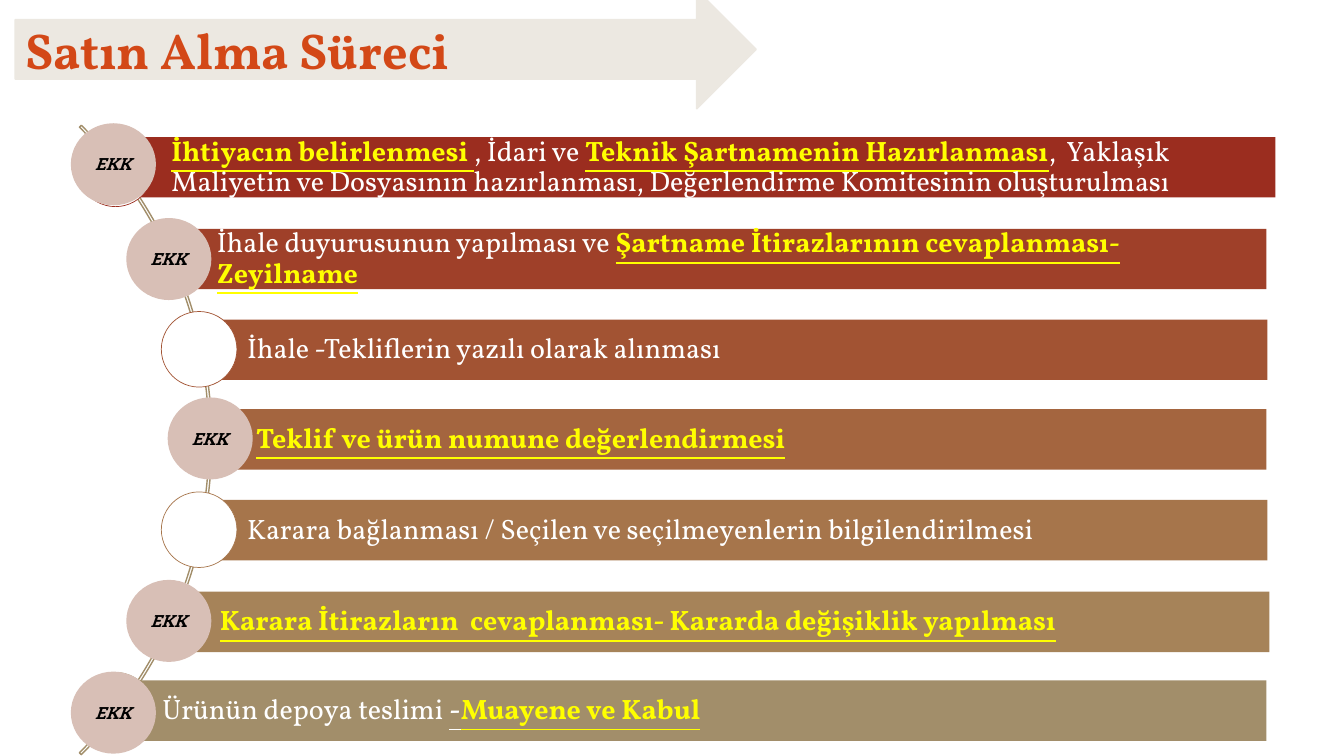
from dataclasses import dataclass

from pptx import Presentation
from pptx.dml.color import RGBColor
from pptx.enum.shapes import MSO_SHAPE
from pptx.enum.text import MSO_ANCHOR, MSO_AUTO_SIZE, PP_ALIGN
from pptx.util import Inches, Pt

RECT = MSO_SHAPE.RECTANGLE
OVAL = MSO_SHAPE.OVAL
DISC = MSO_SHAPE.FLOWCHART_CONNECTOR
ARC = MSO_SHAPE.BLOCK_ARC
ARROW = MSO_SHAPE.RIGHT_ARROW
MIDDLE = MSO_ANCHOR.MIDDLE
LEFT, CENTER = PP_ALIGN.LEFT, PP_ALIGN.CENTER
NO_FIT = MSO_AUTO_SIZE.NONE


@dataclass(frozen=True)
class Theme:
    white: str = "FFFFFF"
    black: str = "000000"
    mark: str = "FFFF00"
    title: str = "D34817"
    arrow: str = "ECE8E1"
    disc: str = "D8BFB6"
    arc: str = "A28E6A"
    serif: str = "Vollkorn"
    slab: str = "Roboto Slab"
    title_size: int = 36
    step_size: int = 20
    tag_size: int = 12


THEME = Theme()
PLAIN = dict(color=THEME.white)
KEY = dict(color=THEME.mark, bold=True, under=True)
DASH = dict(color=THEME.white, bold=True, under=True)

# Each step: colour, bar (left, top, width), ring left, disc place, text runs
STEPS = [
    ("9B2D1F", (1.23, 1.36, 11.42), 0.77, (0.71, 1.23), [
        ("İhtiyacın belirlenmesi ", KEY),
        (", İdari ve ", PLAIN),
        ("Teknik Şartnamenin Hazırlanması", KEY),
        (",  Yaklaşık Maliyetin ve Dosyasının hazırlanması, "
         "Değerlendirme Komitesinin oluşturulması", PLAIN)]),
    ("9F4029", (1.68, 2.27, 10.88), 1.31, (1.26, 2.17), [
        ("İhale duyurusunun yapılması ve ", PLAIN),
        ("Şartname İtirazlarının cevaplanması-Zeyilname", KEY)]),
    ("A25333", (1.98, 3.17, 10.59), 1.6, None, [
        ("İhale -Tekliflerin yazılı olarak alınması", PLAIN)]),
    ("A4653F", (2.07, 4.06, 10.49), 1.7, (1.67, 3.95), [
        ("Teklif ve ürün numune değerlendirmesi", KEY)]),
    ("A6754B", (1.98, 4.96, 10.59), 1.6, None, [
        ("Karara bağlanması / Seçilen ve seçilmeyenlerin bilgilendirilmesi",
         PLAIN)]),
    ("A68359", (1.71, 5.87, 10.88), 1.31, (1.26, 5.76), [
        ("Karara İtirazların  cevaplanması- Kararda değişiklik yapılması",
         KEY)]),
    ("A28E6A", (1.14, 6.75, 11.42), 0.77, (0.71, 6.67), [
        ("Ürünün depoya teslimi ", PLAIN),
        ("-", DASH),
        ("Muayene ve Kabul", KEY)]),
]
BAR_H = 0.6
RING = 0.75
RING_TOP, RING_END = 1.3, 6.67
RING_STEP = (RING_END - RING_TOP) / (len(STEPS) - 1)
ARROW_BOX = (0.15, -0.1, 7.35, 1.18)


def add_form(slide, kind, box, fill=None, line=None, width=1):
    form = slide.shapes.add_shape(kind, *map(Inches, box))
    form.shadow.inherit = False
    if fill:
        form.fill.solid()
        form.fill.fore_color.rgb = RGBColor.from_string(fill)
    else:
        form.fill.background()
    if line:
        form.line.color.rgb = RGBColor.from_string(line)
        form.line.width = Pt(width)
    else:
        form.line.fill.background()
    return form


def add_run(para, text, face, size, color, bold=False, under=False,
            slant=False):
    run = para.add_run()
    run.text = text
    font = run.font
    font.name, font.size = face, Pt(size)
    font.bold, font.italic, font.underline = bold, slant, under
    font.color.rgb = RGBColor.from_string(color)


def add_title(slide, text):
    add_form(slide, ARROW, ARROW_BOX, THEME.arrow, THEME.arrow)
    title = slide.shapes.title
    title.left, title.top, title.width, title.height = map(Inches, ARROW_BOX)
    # Bring the title in front of its arrow
    slide.shapes._spTree.append(title._element)
    frame = title.text_frame
    frame.auto_size = NO_FIT
    frame.vertical_anchor = MIDDLE
    para = frame.paragraphs[0]
    para.alignment = LEFT
    add_run(para, text, THEME.serif, THEME.title_size, THEME.title, bold=True)


def add_arc(slide):
    arc = add_form(slide, ARC, (-6.73, -0.05, 8.83, 8.83), line=THEME.arc)
    # Angles of 315 and 45 degrees, then the band thickness
    for i, value in enumerate((189, 27, 0.003)):
        arc.adjustments[i] = value


def add_bar(slide, place, color, runs):
    bar = add_form(slide, RECT, (*place, BAR_H), color)
    frame = bar.text_frame
    frame.word_wrap = True
    frame.vertical_anchor = MIDDLE
    frame.margin_left = Inches(0.47)
    frame.margin_top = frame.margin_right = frame.margin_bottom = Inches(0.06)
    para = frame.paragraphs[0]
    para.alignment = LEFT
    para.line_spacing = 0.9
    for text, style in runs:
        add_run(para, text, THEME.serif, THEME.step_size, **style)


def add_disc(slide, place):
    disc = add_form(slide, DISC, (*place, 0.83, 0.8), THEME.disc, THEME.disc)
    frame = disc.text_frame
    frame.word_wrap = False
    frame.vertical_anchor = MIDDLE
    para = frame.paragraphs[0]
    para.alignment = CENTER
    add_run(para, "EKK", THEME.slab, THEME.tag_size, THEME.black,
            bold=True, slant=True)


def main():
    deck = Presentation()
    deck.slide_width, deck.slide_height = Inches(13.33), Inches(7.5)
    slide = deck.slides.add_slide(deck.slide_layouts[5])

    # Title on its arrow
    add_title(slide, "Satın Alma Süreci")

    # Steps along the arc
    add_arc(slide)
    for i, (color, bar, left, disc, runs) in enumerate(STEPS):
        add_bar(slide, bar, color, runs)
        ring = (left, RING_TOP + i * RING_STEP, RING, RING)
        add_form(slide, OVAL, ring, THEME.white, color, 0.5)
        if disc:
            add_disc(slide, disc)

    deck.save("out.pptx")


if __name__ == "__main__":
    main()
